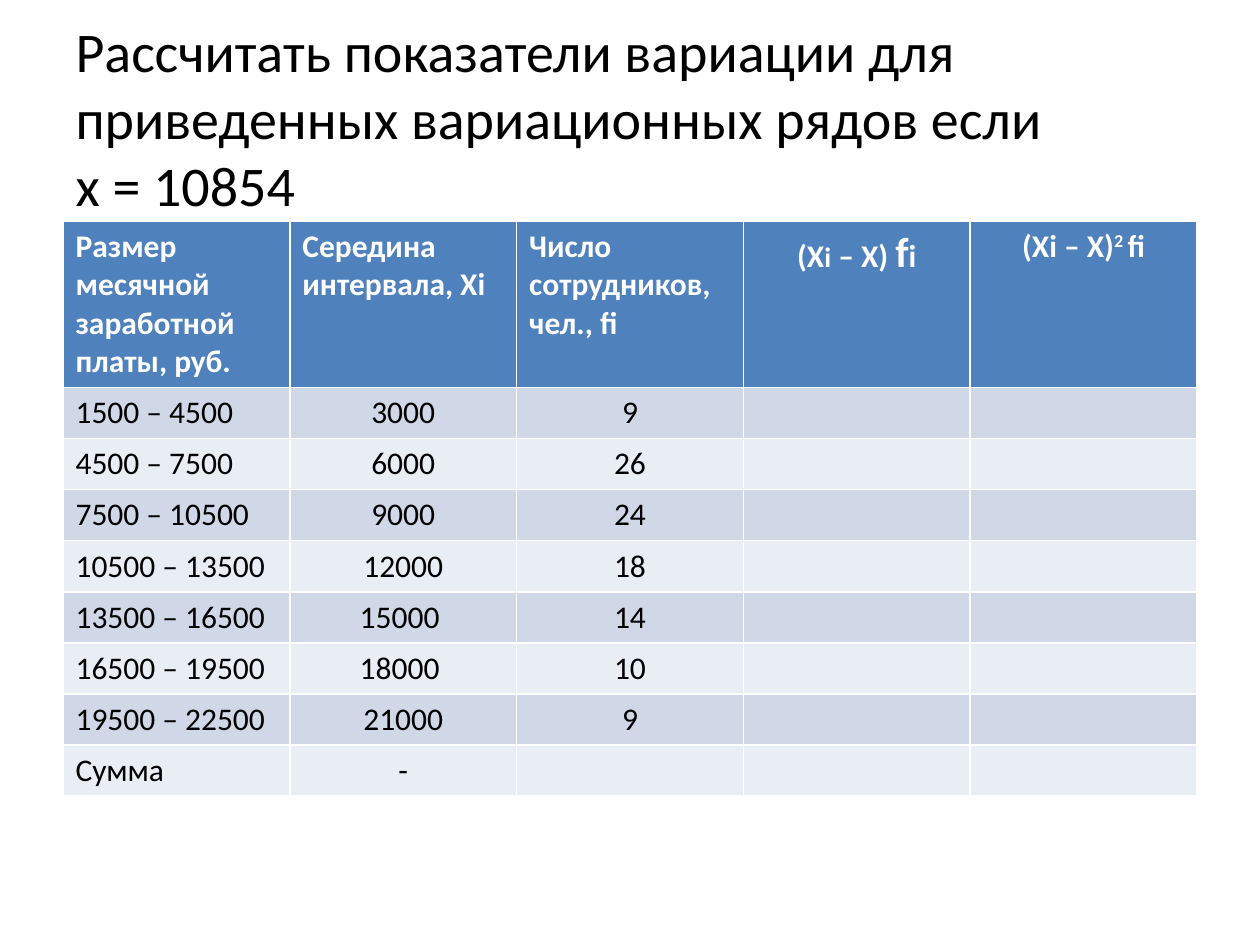
from pptx import Presentation
from pptx.dml.color import RGBColor
from pptx.enum.text import MSO_ANCHOR, PP_ALIGN
from pptx.util import Emu, Pt

PX_PER_INCH = 126
FONT = "Calibri"
BLACK, WHITE = "000000", "FFFFFF"
HEADER_FILL = "4F81BD"
BAND_FILLS = ("D0D8E8", "E9EDF4")
HEADER_HEIGHT, ROW_HEIGHT = 164, 51

TITLE = "Рассчитать показатели вариации для приведенных вариационных рядов если \vх = 10854"

# Each header is a list of runs: (text, size, superscript)
HEADERS = [
    [("Размер месячной заработной платы, руб.", 18, False)],
    [("Середина интервала, Xi", 18, False)],
    [("Число сотрудников, чел., fi", 18, False)],
    [("(X", 18, False), ("i", 16, False), (" – X) ", 18, False),
     ("f", 24, False), ("i", 18, False)],
    [("(Xi – X)", 18, False), ("2 ", 18, True), ("fi", 18, False)],
]
ROWS = [
    ("1500 – 4500", "3000", "9"),
    ("4500 – 7500", "6000", "26"),
    ("7500 – 10500", "9000", "24"),
    ("10500 – 13500", "12000", "18"),
    ("13500 – 16500", "15000 ", "14"),
    ("16500 – 19500", "18000 ", "10"),
    ("19500 – 22500", "21000", "9"),
    ("Сумма", "-", ""),
]


def px(n):
    return Emu(round(n * 914400 / PX_PER_INCH))


def color(hex_value):
    return RGBColor.from_string(hex_value)


def style_font(font, size, hex_value, bold=False):
    font.name = FONT
    font.size = Pt(size)
    font.bold = bold
    font.color.rgb = color(hex_value)


def fill_cell(cell, hex_value):
    cell.fill.solid()
    cell.fill.fore_color.rgb = color(hex_value)


def add_title(s):
    sp = s.shapes.title
    sp.left, sp.top, sp.width, sp.height = px(63), px(38), px(1134), px(158)
    tf = sp.text_frame
    tf.vertical_anchor = MSO_ANCHOR.MIDDLE
    p = tf.paragraphs[0]
    p.text = TITLE
    p.alignment = PP_ALIGN.LEFT
    style_font(p.font, 32, BLACK)


def write_header(cell, runs, alignment):
    fill_cell(cell, HEADER_FILL)
    p = cell.text_frame.paragraphs[0]
    p.alignment = alignment
    for text, size, superscript in runs:
        r = p.add_run()
        r.text = text
        style_font(r.font, size, WHITE, bold=True)
        if superscript:
            r._r.get_or_add_rPr().set("baseline", "30000")


def write_value(cell, text, alignment, band):
    fill_cell(cell, band)
    p = cell.text_frame.paragraphs[0]
    p.text = text
    p.alignment = alignment
    style_font(p.font, 18, BLACK)


def add_variation_table(s):
    height = HEADER_HEIGHT + ROW_HEIGHT * len(ROWS)
    table = s.shapes.add_table(len(ROWS) + 1, len(HEADERS),
                               px(63), px(221), px(1134), px(height)).table

    # Header: the two formula columns are centred
    table.rows[0].height = px(HEADER_HEIGHT)
    for col, runs in enumerate(HEADERS):
        write_header(table.cell(0, col), runs,
                     PP_ALIGN.LEFT if col < 3 else PP_ALIGN.CENTER)

    # Body: banded rows, formula columns left blank to be worked out
    for row, values in enumerate(ROWS, start=1):
        table.rows[row].height = px(ROW_HEIGHT)
        band = BAND_FILLS[(row - 1) % 2]
        for col in range(len(HEADERS)):
            text = values[col] if col < len(values) else ""
            write_value(table.cell(row, col), text,
                        PP_ALIGN.CENTER if col else PP_ALIGN.LEFT, band)


def main():
    prs = Presentation()
    prs.slide_width, prs.slide_height = px(1260), px(945)
    s = prs.slides.add_slide(prs.slide_layouts[5])
    add_title(s)
    add_variation_table(s)
    prs.save("out.pptx")


if __name__ == "__main__":
    main()
